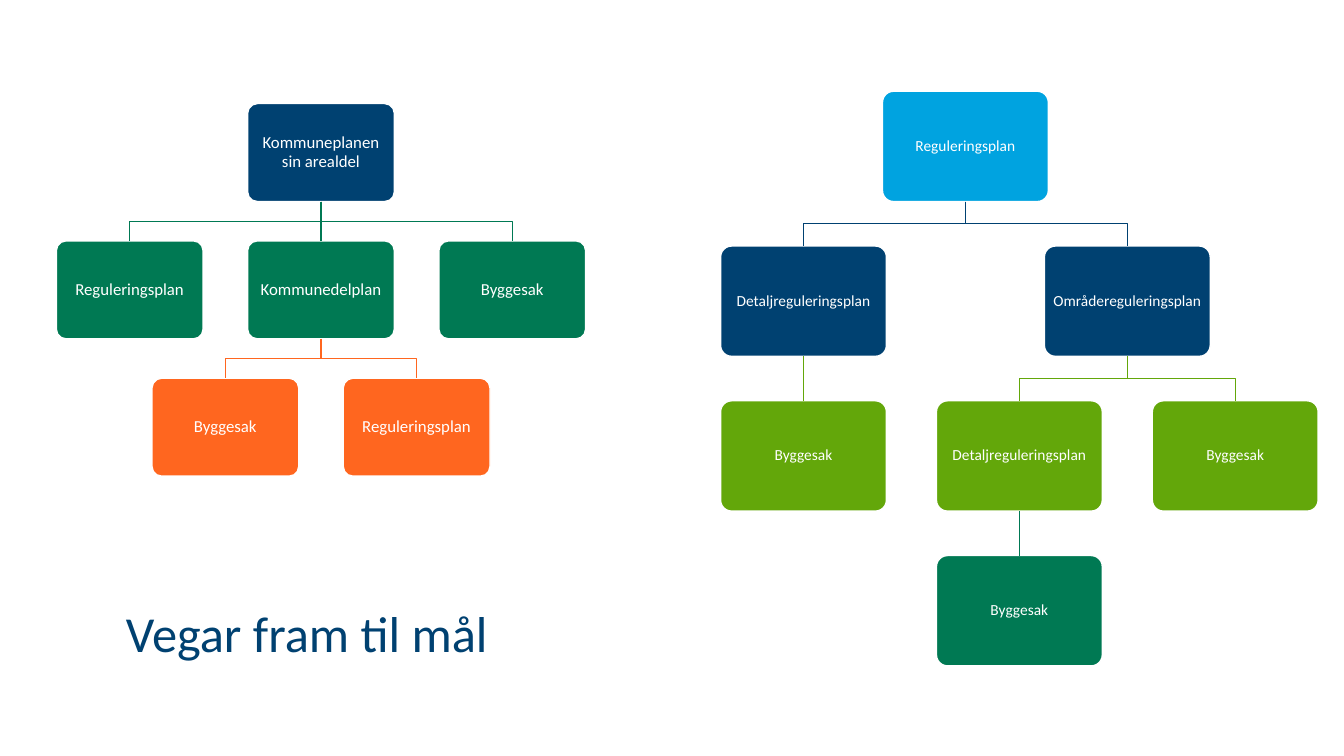
from dataclasses import dataclass

from lxml.etree import SubElement
from pptx import Presentation
from pptx.dml.color import RGBColor
from pptx.enum.shapes import MSO_CONNECTOR as Connector, MSO_SHAPE as Shape
from pptx.enum.text import MSO_ANCHOR as Anchor, MSO_AUTO_SIZE as AutoSize, PP_ALIGN as Align
from pptx.oxml.ns import qn
from pptx.util import Cm, Pt

NAVY, SKY, LIME, GREEN, ORANGE, WHITE = "004171", "00A3E0", "63A70A", "007953", "FF661F", "FFFFFF"


def colour(value):
    return RGBColor.from_string(value)


@dataclass
class Grid:
    first_centre: float
    half_step: float
    top: float
    level_step: float
    width: float
    height: float
    size: int


class PlanSlide:
    """Draws a title and plan trees on one slide in a common style."""

    font = "Calibri"

    def __init__(self, deck):
        self.slide = deck.slides.add_slide(deck.slide_layouts[5])
        self.shapes = self.slide.shapes

    def label(self, frame, text, size, hue, align):
        paragraph = frame.paragraphs[0]
        paragraph.alignment = align
        run = paragraph.add_run()
        run.text = text
        run.font.name, run.font.size = self.font, Pt(size)
        run.font.color.rgb = colour(hue)
        return paragraph

    def title(self, text, left, top, width, height):
        heading = self.shapes.title
        heading.left, heading.top = Cm(left), Cm(top)
        heading.width, heading.height = Cm(width), Cm(height)
        frame = heading.text_frame
        frame.word_wrap, frame.auto_size = True, AutoSize.NONE
        frame.vertical_anchor = Anchor.TOP
        self.label(frame, text, 36, NAVY, Align.LEFT)

    def box(self, grid, text, column, level, hue):
        centre = grid.first_centre + column * grid.half_step
        card = self.shapes.add_shape(
            Shape.ROUNDED_RECTANGLE, Cm(centre - grid.width / 2),
            Cm(grid.top + level * grid.level_step), Cm(grid.width), Cm(grid.height))
        card.adjustments[0] = 0.1
        card.shadow.inherit = False
        card.fill.solid()
        card.fill.fore_color.rgb = colour(hue)
        self.outline(card, WHITE)
        frame = card.text_frame
        frame.word_wrap, frame.vertical_anchor = True, Anchor.MIDDLE
        frame.margin_left = frame.margin_right = Cm(0.1)
        frame.margin_top = frame.margin_bottom = Cm(0.13)
        self.label(frame, text, grid.size, WHITE, Align.CENTER).line_spacing = 0.9
        return card

    def outline(self, shape, hue):
        shape.line.color.rgb = colour(hue)
        shape.line.width = Pt(1)

    def straight_link(self, parent, child, hue):
        link = self.shapes.add_connector(Connector.STRAIGHT, 0, 0, 0, 0)
        link.begin_connect(parent, 2)
        link.end_connect(child, 0)
        self.outline(link, hue)
        SubElement(link._element.spPr, qn("a:effectLst"))

    def bent_link(self, parent, child, hue):
        start_x, end_x = (card.left + card.width // 2 for card in (parent, child))
        start_y = parent.top + parent.height
        middle_y = (start_y + child.top) // 2
        builder = self.shapes.build_freeform(start_x, start_y)
        builder.add_line_segments(
            [(start_x, middle_y), (end_x, middle_y), (end_x, child.top)], close=False)
        link = builder.convert_to_shape()
        link.shadow.inherit = False
        link.fill.background()
        self.outline(link, hue)

    def tree(self, grid, hues, plan, parent=None, parent_column=None, level=0):
        text, column, *followers = plan
        hue = hues[level]
        card = self.box(grid, text, column, level, hue)
        if parent is not None:
            link = self.straight_link if column == parent_column else self.bent_link
            link(parent, card, hue)
        for follower in followers:
            self.tree(grid, hues, follower, card, column, level + 1)


MUNICIPAL_PLAN = (
    "Kommuneplanen sin arealdel", 2,
    ("Reguleringsplan", 0),
    ("Kommunedelplan", 2, ("Byggesak", 1), ("Reguleringsplan", 3)),
    ("Byggesak", 4),
)
ZONING_PLAN = (
    "Reguleringsplan", 1.5,
    ("Detaljreguleringsplan", 0, ("Byggesak", 0)),
    ("Områdereguleringsplan", 3,
     ("Detaljreguleringsplan", 2, ("Byggesak", 2)),
     ("Byggesak", 4)),
)


def main():
    deck = Presentation()
    deck.slide_width, deck.slide_height = Cm(33.87), Cm(19.05)
    page = PlanSlide(deck)
    page.tree(Grid(20.25, 2.72, 2.3, 3.9, 4.18, 2.78, 11), (SKY, NAVY, LIME, GREEN), ZONING_PLAN)
    page.tree(Grid(3.27, 2.41, 2.61, 3.46, 3.7, 2.47, 12), (NAVY, GREEN, ORANGE), MUNICIPAL_PLAN)
    page.title("Vegar fram til mål", 2.92, 15.04, 10.34, 1.8)
    deck.save("out.pptx")


if __name__ == "__main__":
    main()
